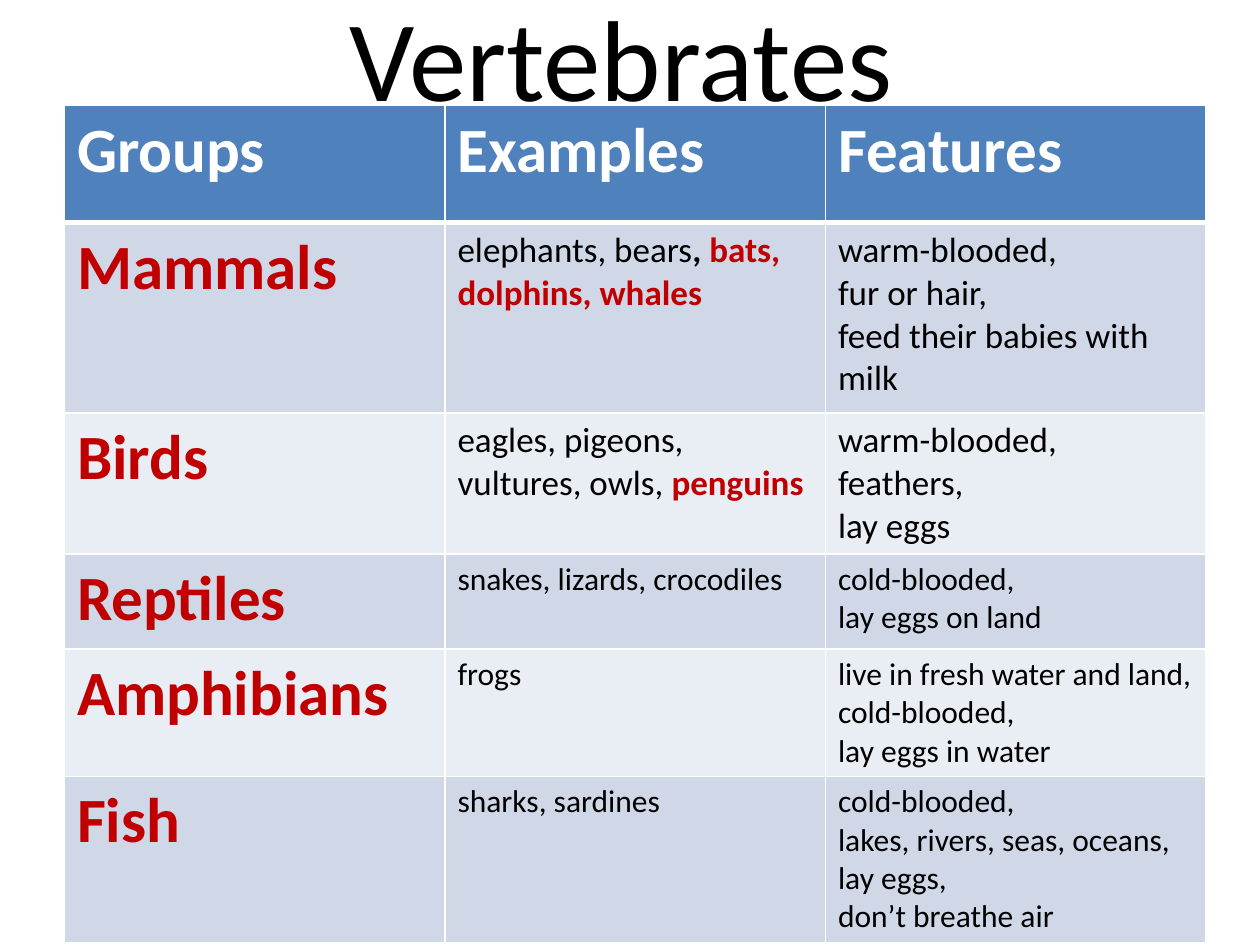
from lxml.etree import SubElement
from pptx import Presentation
from pptx.dml.color import RGBColor
from pptx.enum.text import MSO_ANCHOR, PP_ALIGN
from pptx.oxml.ns import qn
from pptx.util import Cm, Pt

BLACK = RGBColor(0x00, 0x00, 0x00)
WHITE = RGBColor(0xFF, 0xFF, 0xFF)
RED = RGBColor(0xC0, 0x00, 0x00)
HEADER_BLUE = RGBColor(0x4F, 0x81, 0xBD)
BAND_COLOURS = (RGBColor(0xD0, 0xD8, 0xE8), RGBColor(0xE9, 0xED, 0xF4))

TITLE = "Vertebrates"
HEADERS = ("Groups", "Examples", "Features")
# Group, plain examples, bold separator, highlighted examples, features, body size
GROUPS = [
    ("Mammals", "elephants, bears", ", ", "bats, dolphins, whales",
     ("warm-blooded,", "fur or hair,", "feed their babies with milk"), 20),
    ("Birds", "eagles, pigeons, vultures, owls, ", "", "penguins",
     ("warm-blooded,", "feathers,", "lay eggs"), 20),
    ("Reptiles", "snakes, lizards, crocodiles", "", "",
     ("cold-blooded,", "lay eggs on land"), 18),
    ("Amphibians", "frogs", "", "",
     ("live in fresh water and land,", "cold-blooded,", "lay eggs in water"), 18),
    ("Fish", "sharks, sardines", "", "",
     ("cold-blooded,", "lakes, rivers, seas, oceans,", "lay eggs,",
      "don’t breathe air"), 18),
]
COLUMN_WIDTH = 7.67
ROW_HEIGHTS = (2.36, 3.84, 2.84, 1.91, 2.57, 3.35)
HEADING_SIZE = 36


def add_run(paragraph, text, size, colour=BLACK, bold=False):
    run = paragraph.add_run()
    run.text = text
    for name, value in {"name": "Calibri", "size": Pt(size), "bold": bold}.items():
        setattr(run.font, name, value)
    run.font.color.rgb = colour


def set_borders(cell, widths):
    """Draw white borders; widths maps a side (L, R, T, B) to points."""
    properties = cell._tc.get_or_add_tcPr()
    for side, width in widths.items():
        line = SubElement(properties, qn(f"a:ln{side}"), w=str(Pt(width)))
        fill = SubElement(line, qn("a:solidFill"))
        SubElement(fill, qn("a:srgbClr"), val=str(WHITE))


def fill_cell(cell, paragraphs):
    """Write a cell from a list of paragraphs, each a list of run arguments."""
    frame = cell.text_frame
    for index, runs in enumerate(paragraphs):
        paragraph = frame.add_paragraph() if index else frame.paragraphs[0]
        for run in runs:
            add_run(paragraph, *run)


def add_title(slide):
    box = slide.shapes.add_textbox(Cm(1.27), Cm(0.76), Cm(22.86), Cm(1.96))
    frame = box.text_frame
    settings = {
        "word_wrap": True, "vertical_anchor": MSO_ANCHOR.BOTTOM,
        "margin_left": 0, "margin_top": 0,
        "margin_right": Cm(0.35), "margin_bottom": Cm(0.21),
    }
    for name, value in settings.items():
        setattr(frame, name, value)
    paragraph = frame.paragraphs[0]
    paragraph.alignment = PP_ALIGN.CENTER
    add_run(paragraph, TITLE, 65.7)


def add_groups_table(slide):
    rows = [[[[(header, HEADING_SIZE, WHITE, True)]] for header in HEADERS]]
    for group, plain, separator, highlighted, features, size in GROUPS:
        examples = [(plain, size), (separator, size, BLACK, True),
                    (highlighted, size, RED, True)]
        rows.append([
            [[(group, HEADING_SIZE, RED, True)]],
            [[run for run in examples if run[0]]],
            [[(feature, size)] for feature in features],
        ])

    table = slide.shapes.add_table(
        len(rows), len(HEADERS), Cm(1.3), Cm(2.13),
        Cm(COLUMN_WIDTH * len(HEADERS)), Cm(sum(ROW_HEIGHTS))).table
    for column in table.columns:
        column.width = Cm(COLUMN_WIDTH)
    for row_index, (cells, height) in enumerate(zip(rows, ROW_HEIGHTS)):
        table.rows[row_index].height = Cm(height)
        colour = BAND_COLOURS[(row_index - 1) % 2] if row_index else HEADER_BLUE
        for column_index, paragraphs in enumerate(cells):
            cell = table.cell(row_index, column_index)
            set_borders(cell, {"L": 1, "R": 1,
                               "T": 3 if row_index == 1 else 1,
                               "B": 3 if row_index == 0 else 1})
            cell.fill.solid()
            cell.fill.fore_color.rgb = colour
            fill_cell(cell, paragraphs)


def main():
    presentation = Presentation()
    presentation.slide_width = Cm(25.4)
    presentation.slide_height = Cm(19.05)
    slide = presentation.slides.add_slide(presentation.slide_layouts[6])
    add_title(slide)
    add_groups_table(slide)
    presentation.save("out.pptx")


if __name__ == "__main__":
    main()
